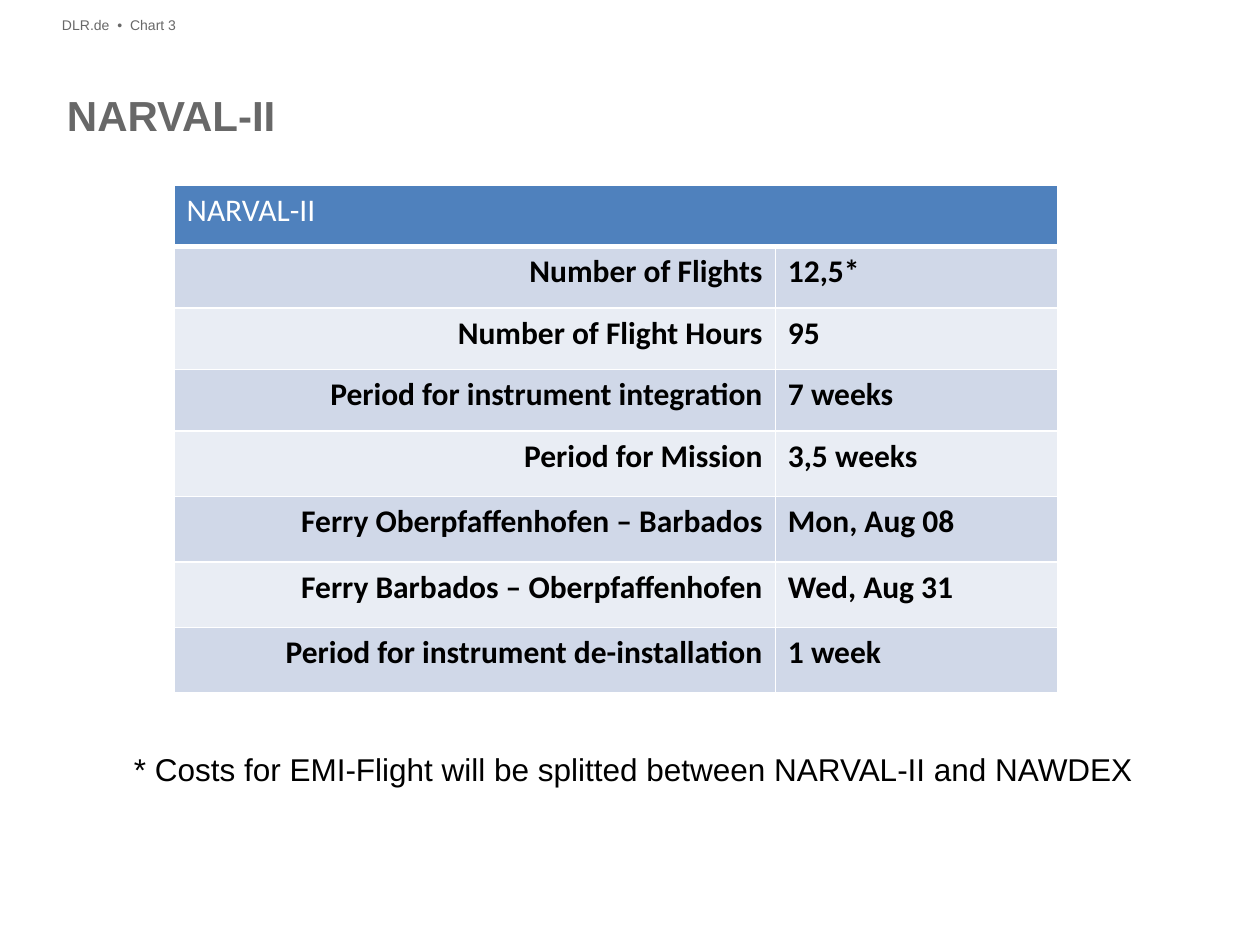
from dataclasses import dataclass

from lxml import etree
from pptx import Presentation
from pptx import util as u
from pptx.dml import color
from pptx.enum import text
from pptx.oxml import ns


@dataclass(frozen=True)
class Theme:
    """Colours, fonts and type sizes of the slide."""
    grey: str = "686868"
    black: str = "000000"
    white: str = "FFFFFF"
    header: str = "4F81BD"
    bands: tuple = ("D0D8E8", "E9EDF4")
    sans: str = "Arial"
    table: str = "Calibri"
    title_size: int = 24
    body_size: int = 18
    small_size: int = 8
    rule: int = 1
    header_rule: int = 3


THEME = Theme()
TITLE = "NARVAL-II"
FACTS = [
    ("Number of Flights", "12,5*"),
    ("Number of Flight Hours", "95"),
    ("Period for instrument integration", "7 weeks"),
    ("Period for Mission", "3,5 weeks"),
    ("Ferry Oberpfaffenhofen – Barbados", "Mon, Aug 08"),
    ("Ferry Barbados – Oberpfaffenhofen", "Wed, Aug 31"),
    ("Period for instrument de-installation", "1 week"),
]
COL_WIDTHS = (12.12, 5.69)
ROW_HEIGHTS = (1.24,) * 4 + (1.32,) * 4


def add_run(p, words, font, size, rgb, bold=False):
    """Add one formatted run to a paragraph."""
    r = p.add_run()
    r.text = words
    r.font.name = font
    r.font.size = u.Pt(size)
    r.font.bold = bold
    r.font.color.rgb = color.RGBColor.from_string(rgb)


def add_text(s, box, words, size, rgb, bold=False, wrap=True):
    """Add a text box without insets; box is left, top, width, height in cm."""
    tf = s.shapes.add_textbox(*map(u.Cm, box)).text_frame
    tf.word_wrap = wrap
    tf.margin_left = tf.margin_top = tf.margin_right = tf.margin_bottom = 0
    add_run(tf.paragraphs[0], words, THEME.sans, size, rgb, bold)


def set_borders(cell, bottom):
    """Draw white borders on all four sides of a cell."""
    tc_pr = cell._tc.get_or_add_tcPr()
    widths = {"L": THEME.rule, "R": THEME.rule, "T": THEME.rule, "B": bottom}
    for side, width in widths.items():
        ln = etree.SubElement(tc_pr, ns.qn(f"a:ln{side}"), w=str(u.Pt(width)))
        fill = etree.SubElement(ln, ns.qn("a:solidFill"))
        etree.SubElement(fill, ns.qn("a:srgbClr"), val=THEME.white)


def style_cell(cell, fill, bottom=THEME.rule):
    """Give a cell its borders and fill."""
    set_borders(cell, bottom)
    cell.fill.solid()
    cell.fill.fore_color.rgb = color.RGBColor.from_string(fill)


def add_facts_table(s):
    """Add the campaign table with a merged header and banded rows."""
    box = (3.51, 3.73, sum(COL_WIDTHS), sum(ROW_HEIGHTS))
    table = s.shapes.add_table(
        len(ROW_HEIGHTS), len(COL_WIDTHS), *map(u.Cm, box)).table
    for col, width in zip(table.columns, COL_WIDTHS):
        col.width = u.Cm(width)
    for row, height in zip(table.rows, ROW_HEIGHTS):
        row.height = u.Cm(height)

    for cell in table.rows[0].cells:
        style_cell(cell, THEME.header, THEME.header_rule)
    head = table.cell(0, 0)
    head.merge(table.cell(0, 1))
    add_run(head.text_frame.paragraphs[0], TITLE,
            THEME.table, THEME.body_size, THEME.white)

    aligns = (text.PP_ALIGN.RIGHT, text.PP_ALIGN.LEFT)
    for i, fact in enumerate(FACTS):
        for j, (words, align) in enumerate(zip(fact, aligns)):
            cell = table.cell(i + 1, j)
            style_cell(cell, THEME.bands[i % 2])
            p = cell.text_frame.paragraphs[0]
            p.alignment = align
            add_run(p, words, THEME.table, THEME.body_size, THEME.black, True)


def main():
    """Build and save the slide."""
    prs = Presentation()
    prs.slide_width, prs.slide_height = u.Cm(25.4), u.Cm(19.05)
    s = prs.slides.add_slide(prs.slide_layouts[6])
    add_text(s, (1.35, 1.8, 22.7, 2.06), TITLE,
             THEME.title_size, THEME.grey, bold=True)
    add_facts_table(s)
    add_text(s, (2.7, 15.11, 22.2, 0.76),
             "* Costs for EMI-Flight will be splitted between NARVAL-II and NAWDEX",
             THEME.body_size, THEME.black)
    add_text(s, (1.25, 0.33, 2.9, 0.4), "DLR.de  •  Chart 3",
             THEME.small_size, THEME.grey, wrap=False)
    prs.save("out.pptx")


if __name__ == "__main__":
    main()
